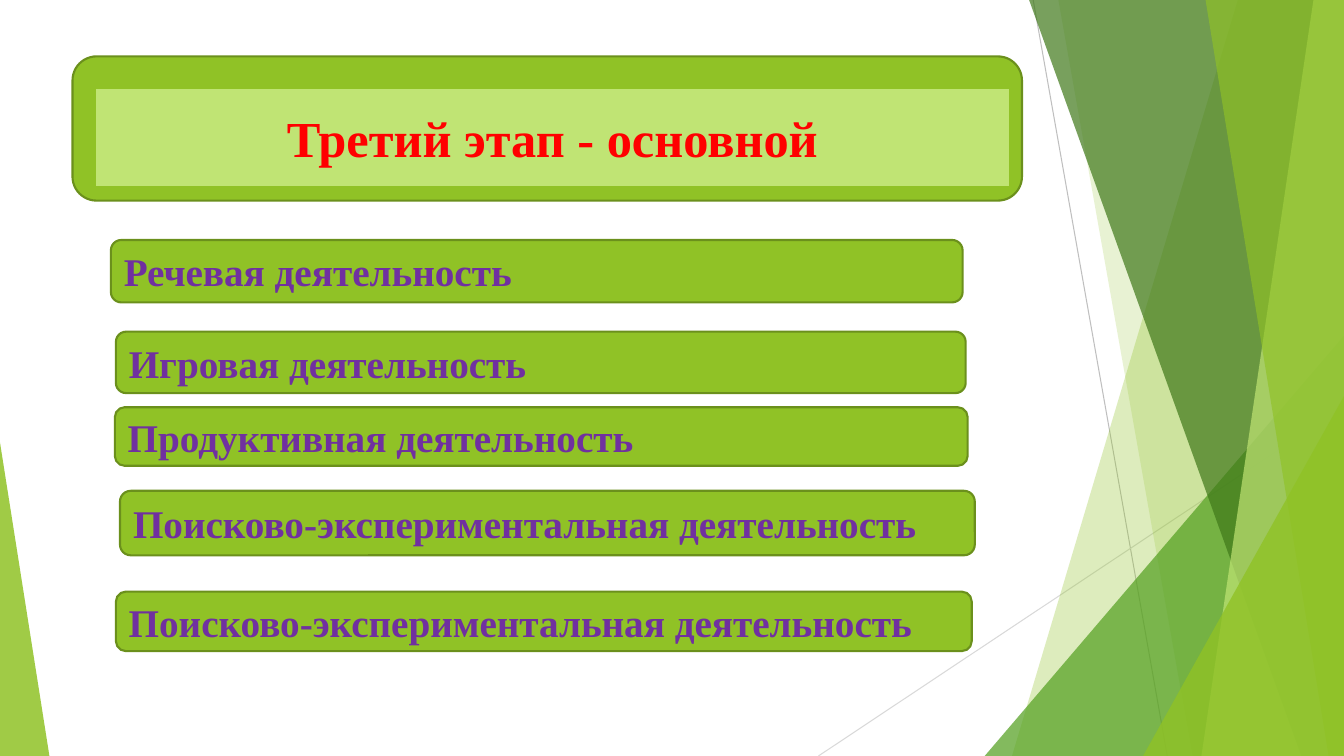
from lxml.etree import SubElement
from pptx import Presentation
from pptx.dml.color import RGBColor
from pptx.enum.shapes import MSO_CONNECTOR, MSO_SHAPE
from pptx.enum.text import MSO_ANCHOR, MSO_AUTO_SIZE, PP_ALIGN
from pptx.oxml.ns import qn
from pptx.util import Pt

WIDTH, HEIGHT = 960, 540
LIME, PALE, DARK_LIME = "90C226", "C0E474", "6B901C"
FONT = "Times New Roman"

RAYS = [((738, 0, 833.8, HEIGHT), "BFBFBF"), ((WIDTH, 290.2, 584.6, HEIGHT), "D9D9D9")]
BACK_FACETS = [(884.2, 722.9, LIME, 30), (756, 851.8, LIME, 20)]
FRONT_FACETS = [(735.1, 929.5, "3F7819", 70), (938.2, 858.2, PALE, 70), (861.1, 949, LIME, 65)]
ACTIVITIES = [
    ("Речевая деятельность", (79.2, 171.4, 608.4, 44.6)),
    ("Игровая деятельность", (82.8, 236.9, 607, 43.9)),
    ("Продуктивная деятельность", (82.1, 290.9, 609.1, 41.8)),
    ("Поисково-экспериментальная деятельность", (85.7, 350.6, 610.6, 46.1)),
    ("Поисково-экспериментальная деятельность", (82.8, 422.6, 611.3, 42.5)),
]


def color(value):
    """Turn a hex string into a colour."""
    return RGBColor.from_string(value)


def paint(shape, fill, outline=None, opacity=100):
    """Give a shape a solid fill and an optional outline."""
    shape.fill.solid()
    shape.fill.fore_color.rgb = color(fill)
    if opacity < 100:
        tint = shape.fill._xPr.find(qn("a:solidFill"))[0]
        SubElement(tint, qn("a:alpha"), val=str(opacity * 1000))
    if outline:
        shape.line.color.rgb = color(outline)
        shape.line.width = Pt(1.5)
    else:
        shape.line.fill.background()


def write(shape, text, size, ink, align):
    """Write one bold, vertically centred line into a shape."""
    frame = shape.text_frame
    frame.text = text
    frame.word_wrap = True
    frame.auto_size = MSO_AUTO_SIZE.NONE
    frame.vertical_anchor = MSO_ANCHOR.MIDDLE
    para = frame.paragraphs[0]
    para.alignment = align
    font = para.runs[0].font
    font.name, font.size, font.bold = FONT, Pt(size), True
    font.color.rgb = color(ink)


def add_preset(page, preset, box):
    """Add a preset shape without a shadow."""
    shape = page.shapes.add_shape(preset, *map(Pt, box))
    shape.shadow.inherit = False
    return shape


def add_ray(page, ends, ink):
    """Add a thin decorative line."""
    ray = page.shapes.add_connector(MSO_CONNECTOR.STRAIGHT, *map(Pt, ends))
    ray.line.color.rgb = color(ink)
    ray.line.width = Pt(0.75)
    SubElement(ray._element.spPr, qn("a:effectLst"))


def add_facet(page, top, bottom, fill, opacity):
    """Add a translucent facet reaching the right edge of the page."""
    builder = page.shapes.build_freeform(Pt(top), 0)
    corners = [(WIDTH, 0), (WIDTH, HEIGHT), (bottom, HEIGHT)]
    builder.add_line_segments([(Pt(x), Pt(y)) for x, y in corners])
    facet = builder.convert_to_shape()
    facet.shadow.inherit = False
    paint(facet, fill, opacity=opacity)


def add_corner(page, left, top, width, apex, fill, opacity):
    """Add a translucent triangle standing on the bottom edge."""
    box = (left, top, width, HEIGHT - top)
    corner = add_preset(page, MSO_SHAPE.ISOSCELES_TRIANGLE, box)
    corner.adjustments[0] = apex
    paint(corner, fill, opacity=opacity)


def add_backdrop(page):
    """Draw the green facets at the sides of the page."""
    for ends, ink in RAYS:
        add_ray(page, ends, ink)
    for facet in BACK_FACETS:
        add_facet(page, *facet)
    add_corner(page, 703.4, 239.8, 256.6, 1, "54A021", 72)
    for facet in FRONT_FACETS:
        add_facet(page, *facet)
    add_corner(page, 816.5, 283, 143.5, 1, LIME, 80)
    add_corner(page, 0, 316.1, 35.3, 0, LIME, 85)


def add_heading(page, text, box):
    """Draw the title card with the rounded title on it."""
    left, top, width, height = box
    card = add_preset(page, MSO_SHAPE.ROUNDED_RECTANGLE, box)
    paint(card, LIME, DARK_LIME)
    title = page.shapes.title
    title.left, title.top = Pt(left + 15.9), Pt(top + 22.3)
    title.width, title.height = Pt(width - 24.4), Pt(height - 31.7)
    outline = SubElement(title._element.spPr, qn("a:prstGeom"), prst="roundRect")
    SubElement(outline, qn("a:avLst"))
    paint(title, PALE, LIME)
    write(title, text, 36, "FF0000", PP_ALIGN.CENTER)
    card._element.addnext(title._element)


def add_activity(page, text, box):
    """Draw one activity bar."""
    bar = add_preset(page, MSO_SHAPE.ROUNDED_RECTANGLE, box)
    paint(bar, LIME, DARK_LIME)
    write(bar, text, 28, "7030A0", PP_ALIGN.LEFT)


def main():
    """Build and save the deck."""
    deck = Presentation()
    deck.slide_width, deck.slide_height = Pt(WIDTH), Pt(HEIGHT)
    page = deck.slides.add_slide(deck.slide_layouts.get_by_name("Title Only"))
    add_backdrop(page)
    add_heading(page, "Третий этап - основной", (51.8, 40.3, 678.2, 103))
    for text, box in ACTIVITIES:
        add_activity(page, text, box)
    deck.save("out.pptx")


if __name__ == "__main__":
    main()
